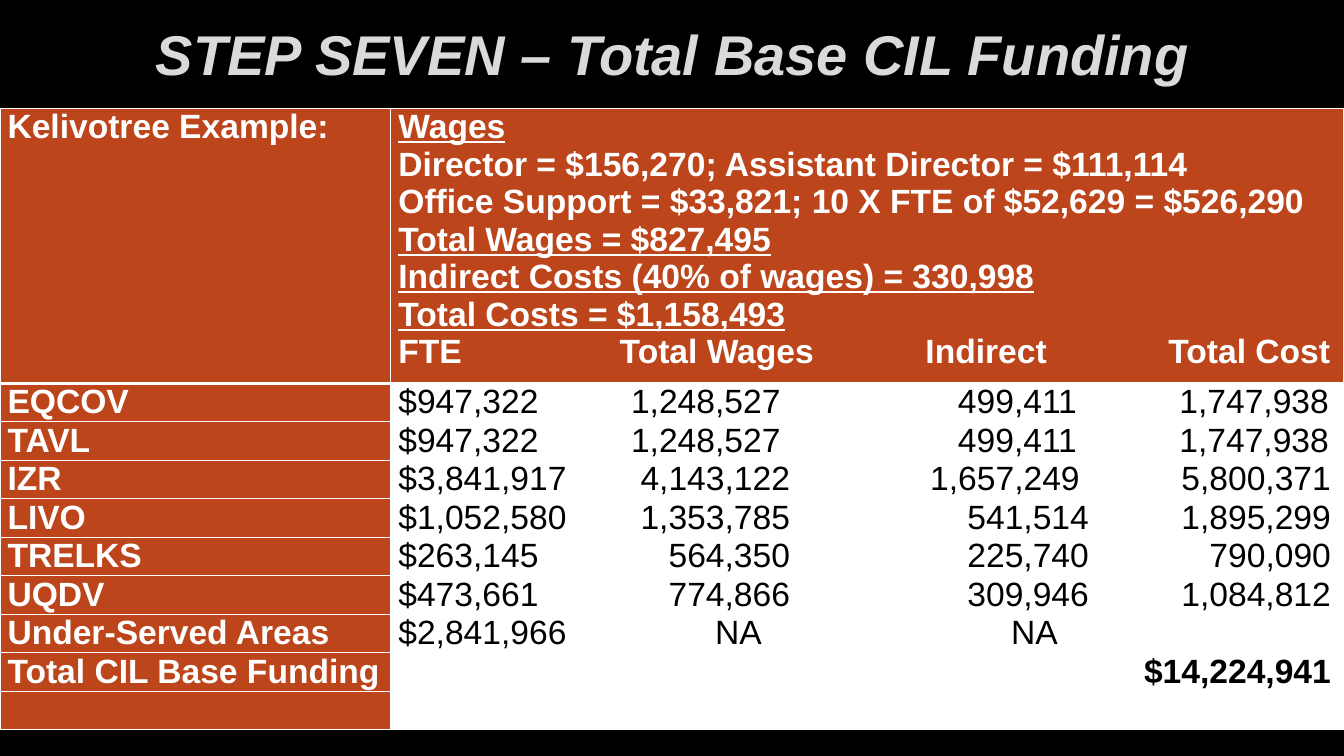
from dataclasses import dataclass

from lxml import etree
from pptx import Presentation
from pptx import util as u
from pptx.dml.color import RGBColor
from pptx.enum import text
from pptx.oxml.ns import qn


@dataclass(frozen=True)
class Theme:
    font: str = "Arial"
    title_size: int = 40
    table_size: int = 24
    background: str = "000000"
    title: str = "DADADA"
    title_outline: str = "404040"
    label_fill: str = "BC451B"
    value_fill: str = "FFFFFF"
    light: str = "FFFFFF"
    dark: str = "000000"
    border: str = "FFFFFF"


# Wage summary: text and whether it is underlined
SUMMARY = [
    ("Wages", True),
    ("Director = $156,270; Assistant Director = $111,114", False),
    ("Office Support = $33,821; 10 X FTE of $52,629 = $526,290", False),
    ("Total Wages = $827,495", True),
    ("Indirect Costs (40% of wages) = 330,998", True),
    ("Total Costs = $1,158,493", True),
    ("FTE\tTotal Wages\tIndirect\tTotal Cost", False),
]

# Right-aligned tab stops in cm
HEADING_STOPS = (10.47, 16.34, 23.48)
NARROW_STOPS = (9.63, 17.1, 23.45)
MIDDLE_STOPS = (9.87, 17.17, 23.5)
WIDE_STOPS = (9.87, 17.4, 23.5)
NA_STOPS = (9.16, 16.62)
TOTAL_STOPS = (23.5,)

# Centre, figures, tab stops
CENTRES = [
    ("EQCOV", "$947,322\t1,248,527\t499,411\t1,747,938", NARROW_STOPS),
    ("TAVL", "$947,322\t1,248,527\t499,411\t1,747,938", NARROW_STOPS),
    ("IZR", "$3,841,917\t4,143,122\t1,657,249\t5,800,371", MIDDLE_STOPS),
    ("LIVO", "$1,052,580\t1,353,785\t541,514\t1,895,299", WIDE_STOPS),
    ("TRELKS", "$263,145\t564,350\t225,740\t790,090", WIDE_STOPS),
    ("UQDV", "$473,661\t774,866\t309,946\t1,084,812", WIDE_STOPS),
    ("Under-Served Areas", "$2,841,966\tNA\tNA", NA_STOPS),
    ("Total CIL Base Funding", "\t$14,224,941", TOTAL_STOPS),
    ("", "", ()),
]


class FundingSlide:
    def __init__(self, deck, theme):
        self.theme = theme
        self.page = deck.slides.add_slide(deck.slide_layouts[5])
        fill = self.page.background.fill
        fill.solid()
        fill.fore_color.rgb = RGBColor.from_string(theme.background)

    def style(self, para, size, color, bold=True, italic=False, underline=False):
        font = para.font
        font.name, font.size = self.theme.font, u.Pt(size)
        font.bold, font.italic, font.underline = bold, italic, underline
        font.color.rgb = RGBColor.from_string(color)

    def line(self, parent, tag, width, color, alpha=None):
        line = etree.SubElement(parent, qn(tag), w=str(u.Pt(width)))
        solid = etree.SubElement(line, qn("a:solidFill"))
        shade = etree.SubElement(solid, qn("a:srgbClr"), val=color)
        if alpha is not None:
            etree.SubElement(shade, qn("a:alpha"), val=str(alpha * 1000))
        return line

    def title(self, words, left, top, width, height):
        box = self.page.shapes.title
        box.left, box.top, box.width, box.height = map(u.Cm, (left, top, width, height))
        frame = box.text_frame
        frame.text = words
        frame.word_wrap = True
        frame.auto_size = text.MSO_AUTO_SIZE.NONE
        frame.vertical_anchor = text.MSO_ANCHOR.MIDDLE
        para = frame.paragraphs[0]
        para.alignment = text.PP_ALIGN.CENTER
        self.style(para, self.theme.title_size, self.theme.title, italic=True)
        properties = para.runs[0].font._element
        properties.insert(0, self.line(properties, "a:ln", 0.75, self.theme.title_outline, 10))

    def tabs(self, para, stops):
        stop_list = etree.Element(qn("a:tabLst"))
        for stop in stops:
            etree.SubElement(stop_list, qn("a:tab"), pos=str(u.Cm(stop)), algn="r")
        properties = para._p.get_or_add_pPr()
        properties.find(qn("a:defRPr")).addprevious(stop_list)

    def cell(self, cell, lines, fill, color, bold=True, stops=(), bottom=1):
        cell.margin_left = cell.margin_right = u.Cm(0.19)
        cell.margin_top = cell.margin_bottom = 0
        # Borders come before the fill
        properties = cell._tc.get_or_add_tcPr()
        for side, width in (("L", 1), ("R", 1), ("T", 1), ("B", bottom)):
            self.line(properties, f"a:ln{side}", width, self.theme.border)
        cell.fill.solid()
        cell.fill.fore_color.rgb = RGBColor.from_string(fill)
        # Text
        frame = cell.text_frame
        frame.text = "\n".join(words for words, _ in lines)
        for para, (words, underline) in zip(frame.paragraphs, lines):
            self.style(para, self.theme.table_size, color, bold, underline=underline)
            if "\t" in words:
                self.tabs(para, stops)

    def table(self, left, top, columns, header_height, row_height):
        theme = self.theme
        rows = len(CENTRES) + 1
        height = header_height + row_height * len(CENTRES)
        table = self.page.shapes.add_table(
            rows, len(columns), *map(u.Cm, (left, top, sum(columns), height))).table
        table.first_row = table.horz_banding = False
        for column, width in zip(table.columns, columns):
            column.width = u.Cm(width)
        for row in table.rows:
            row.height = u.Cm(row_height)
        table.rows[0].height = u.Cm(header_height)

        # Header row
        for column, lines in enumerate(([("Kelivotree Example:", False)], SUMMARY)):
            self.cell(table.cell(0, column), lines, theme.label_fill, theme.light,
                      stops=HEADING_STOPS, bottom=3)
        # Centre rows
        for row, (centre, figures, stops) in enumerate(CENTRES, 1):
            self.cell(table.cell(row, 0), [(centre, False)], theme.label_fill, theme.light)
            self.cell(table.cell(row, 1), [(figures, False)], theme.value_fill, theme.dark,
                      bold=stops == TOTAL_STOPS, stops=stops)


def main():
    deck = Presentation()
    deck.slide_width, deck.slide_height = u.Cm(33.87), u.Cm(19.05)
    slide = FundingSlide(deck, Theme())
    slide.title("STEP SEVEN – Total Base CIL Funding", 2.57, 0, 28.75, 2.7)
    slide.table(0, 2.73, (9.85, 24.01), 6.93, 0.97)
    deck.save("out.pptx")


if __name__ == "__main__":
    main()
